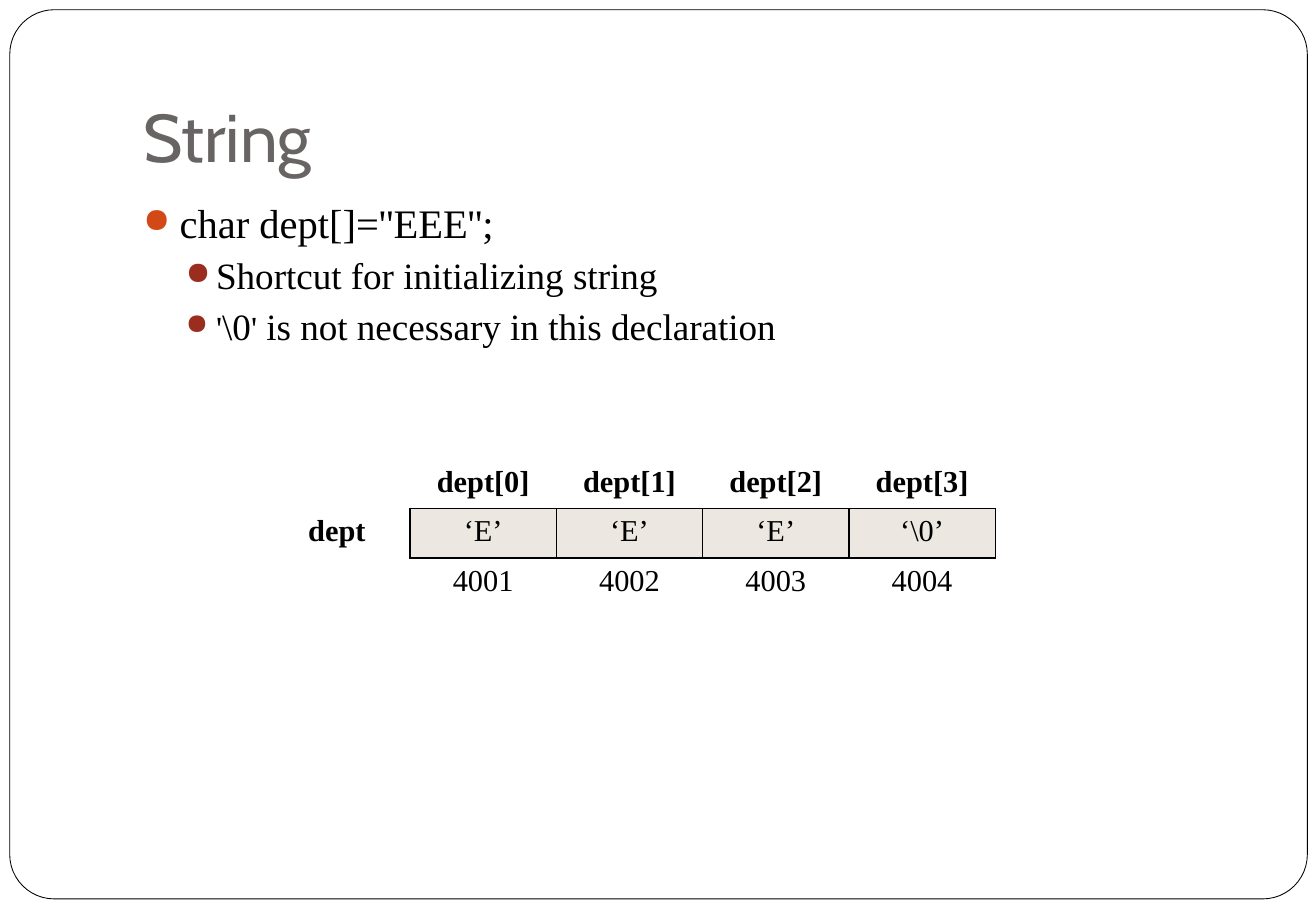
from dataclasses import dataclass, field

from lxml.etree import SubElement
from pptx import Presentation
from pptx.dml.color import RGBColor
from pptx.enum.shapes import MSO_SHAPE
from pptx.enum.text import MSO_ANCHOR, PP_ALIGN
from pptx.oxml.ns import qn
from pptx.slide import Slide
from pptx.table import _Cell
from pptx.text.text import TextFrame, _Paragraph
from pptx.util import Inches, Length, Pt

SLIDE_WIDTH, SLIDE_HEIGHT = Inches(10.83), Inches(7.5)


@dataclass(frozen=True)
class Theme:
    title_font: str = "Cabin"
    body_font: str = "Times New Roman"
    title_color: str = "696464"
    ink: str = "000000"
    paper: str = "FFFFFF"
    memory_fill: str = "ECE8E1"
    bullet_colors: tuple[str, str] = ("D34817", "9B2D1F")
    title_size: float = 40
    body_sizes: tuple[float, float] = (24, 22)
    quote_size: float = 20
    table_size: float = 18
    frame_line: float = 0.5
    cell_line: float = 1


@dataclass(frozen=True)
class Box:
    """A rectangle in percent of the slide's width and height."""
    left: float
    top: float
    width: float
    height: float

    def lengths(self) -> tuple[Length, Length, Length, Length]:
        return (Length(SLIDE_WIDTH * self.left / 100), Length(SLIDE_HEIGHT * self.top / 100),
                Length(SLIDE_WIDTH * self.width / 100), Length(SLIDE_HEIGHT * self.height / 100))


@dataclass(frozen=True)
class Bullet:
    level: int
    runs: tuple[str, ...]


@dataclass(frozen=True)
class Level:
    margin: float
    hanging: float
    space_before: float


@dataclass(frozen=True)
class MemoryCell:
    value: str
    address: int


@dataclass(frozen=True)
class MemoryTable:
    name: str
    cells: list[MemoryCell] = field(default_factory=list)

    def rows(self) -> list[list[str]]:
        return [["", *(f"{self.name}[{index}]" for index in range(len(self.cells)))],
                [self.name, *(cell.value for cell in self.cells)],
                ["", *(str(cell.address) for cell in self.cells)]]


THEME = Theme()
FRAME_BOX = Box(0.74, 1.07, 98.6, 97.6)
TITLE_BOX = Box(9.97, 4, 85.04, 16.67)
BODY_BOX = Box(9.97, 21.07, 85.04, 66.67)
TABLE_BOX = Box(20.04, 50.4, 55.59, 16.27)
LEVELS = (Level(0.3, 0.3, 5.8), Level(0.6, 0.25, 3.7))
BULLETS = (
    Bullet(0, ("char dept[]=''EEE'';",)),
    Bullet(1, ("Shortcut for initializing string",)),
    Bullet(1, ("'", "\\0", "'", " is not necessary in this declaration")),
)
DEPT = MemoryTable("dept", [MemoryCell("‘E’", 4001), MemoryCell("‘E’", 4002),
                            MemoryCell("‘E’", 4003), MemoryCell("‘\\0’", 4004)])


def set_font(paragraph: _Paragraph, name: str, size: float, color: str, bold: bool = False) -> None:
    font = paragraph.font
    font.name, font.size, font.bold = name, Pt(size), bold
    font.color.rgb = RGBColor.from_string(color)


def set_bullet(paragraph: _Paragraph, level: Level, color: str) -> None:
    properties = paragraph._p.get_or_add_pPr()
    properties.set("marL", str(Inches(level.margin)))
    properties.set("indent", str(-Inches(level.hanging)))
    SubElement(SubElement(properties, qn("a:buClr")), qn("a:srgbClr"), val=color)
    SubElement(properties, qn("a:buSzPct"), val="85000")
    SubElement(properties, qn("a:buChar"), char="●")


def set_borders(cell: _Cell, sides: str) -> None:
    properties = cell._tc.get_or_add_tcPr()
    for side in "LRTB":
        line = SubElement(properties, qn(f"a:ln{side}"), w=str(Pt(THEME.cell_line)))
        if side in sides:
            fill = SubElement(line, qn("a:solidFill"))
            SubElement(fill, qn("a:srgbClr"), val=THEME.ink)
        else:
            SubElement(line, qn("a:noFill"))


def add_text_frame(slide: Slide, box: Box) -> TextFrame:
    text_frame = slide.shapes.add_textbox(*box.lengths()).text_frame
    text_frame.word_wrap = True
    return text_frame


def draw_frame(slide: Slide) -> None:
    shape = slide.shapes.add_shape(MSO_SHAPE.ROUNDED_RECTANGLE, *FRAME_BOX.lengths())
    shape.adjustments[0] = 0.05
    shape.shadow.inherit = False
    shape.fill.solid()
    shape.fill.fore_color.rgb = RGBColor.from_string(THEME.paper)
    shape.line.color.rgb = RGBColor.from_string(THEME.ink)
    shape.line.width = Pt(THEME.frame_line)


def draw_title(slide: Slide, text: str) -> None:
    text_frame = add_text_frame(slide, TITLE_BOX)
    text_frame.vertical_anchor = MSO_ANCHOR.BOTTOM
    text_frame.margin_bottom = Inches(0.1)
    paragraph = text_frame.paragraphs[0]
    paragraph.text = text
    set_font(paragraph, THEME.title_font, THEME.title_size, THEME.title_color)


def draw_bullets(slide: Slide, bullets: tuple[Bullet, ...]) -> None:
    text_frame = add_text_frame(slide, BODY_BOX)
    for index, bullet in enumerate(bullets):
        paragraph = text_frame.add_paragraph() if index else text_frame.paragraphs[0]
        level = LEVELS[bullet.level]
        paragraph.level = bullet.level
        set_bullet(paragraph, level, THEME.bullet_colors[bullet.level])
        paragraph.space_before = Pt(level.space_before)
        set_font(paragraph, THEME.body_font, THEME.body_sizes[bullet.level], THEME.ink)
        for text in bullet.runs:
            run = paragraph.add_run()
            run.text = text
            if text == "'":
                run.font.size = Pt(THEME.quote_size)


def draw_memory(slide: Slide, memory: MemoryTable) -> None:
    rows = memory.rows()
    table = slide.shapes.add_table(len(rows), len(rows[0]), *TABLE_BOX.lengths()).table
    table.first_row = table.horz_banding = False
    for row_index, row in enumerate(rows):
        for column_index, text in enumerate(row):
            cell = table.cell(row_index, column_index)
            is_label = column_index == 0
            is_value = row_index == 1 and not is_label
            # Labels touch the value cells on one side only
            sides = ("", "R", "")[row_index] if is_label else ("B", "LRTB", "T")[row_index]
            set_borders(cell, sides)
            if is_value:
                cell.fill.solid()
                cell.fill.fore_color.rgb = RGBColor.from_string(THEME.memory_fill)
            else:
                cell.fill.background()
            paragraph = cell.text_frame.paragraphs[0]
            paragraph.text = text
            paragraph.alignment = PP_ALIGN.CENTER
            set_font(paragraph, THEME.body_font, THEME.table_size, THEME.ink,
                     bold=is_label or row_index == 0)


def main() -> None:
    presentation = Presentation()
    presentation.slide_width, presentation.slide_height = SLIDE_WIDTH, SLIDE_HEIGHT
    slide = presentation.slides.add_slide(presentation.slide_layouts[6])
    draw_frame(slide)
    draw_title(slide, "String")
    draw_bullets(slide, BULLETS)
    draw_memory(slide, DEPT)
    presentation.save("out.pptx")


if __name__ == "__main__":
    main()
